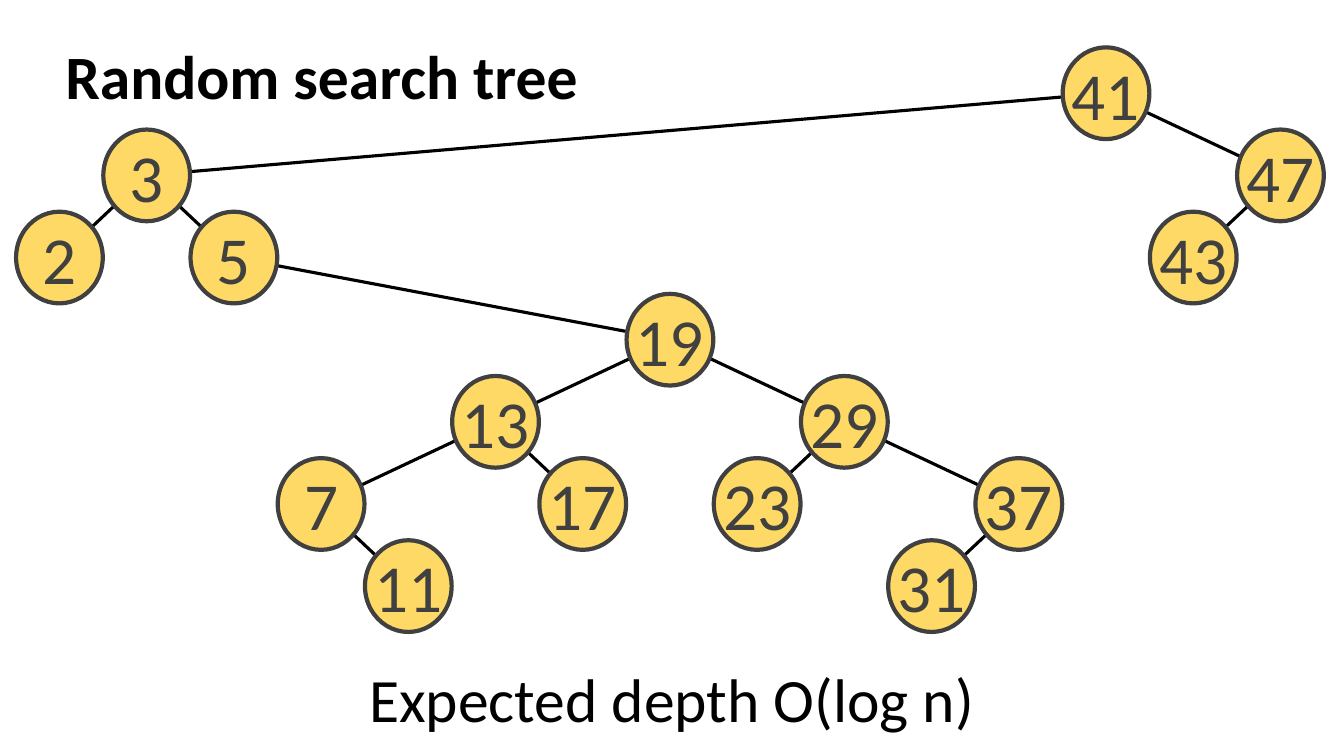
from lxml import etree
from pptx import Presentation
from pptx.dml.color import RGBColor
from pptx.enum.shapes import MSO_CONNECTOR, MSO_SHAPE
from pptx.enum.text import MSO_ANCHOR, PP_ALIGN
from pptx.oxml.ns import qn
from pptx.util import Inches, Pt

TITLE = "Random search tree"
NOTE = "Expected depth O(log n)"
ROOT = 41
KIDS = {
    41: (3, 47),
    3: (2, 5),
    47: (43, None),
    5: (None, 19),
    19: (13, 29),
    13: (7, 17),
    29: (23, 37),
    7: (None, 11),
    37: (31, None),
}

BLACK = RGBColor(0x00, 0x00, 0x00)
GRAY = RGBColor(0x40, 0x40, 0x40)
GOLD = RGBColor(0xFF, 0xD9, 0x66)
FONT = "Calibri"
LINE, OVAL = MSO_CONNECTOR.STRAIGHT, MSO_SHAPE.OVAL
MIDDLE, TOP = MSO_ANCHOR.MIDDLE, MSO_ANCHOR.TOP
LEFT, CENTER = PP_ALIGN.LEFT, PP_ALIGN.CENTER

WIDE, HIGH = 13.33, 7.5
COL, ROW = 0.865, 0.815
NODE_W, NODE_H = 0.86, 0.91
EDGE_X, EDGE_Y = 0.16, 0.47


def walk(key, depth=0):
    if key is None:
        return []
    left, right = KIDS.get(key, (None, None))
    return walk(left, depth + 1) + [(key, depth)] + walk(right, depth + 1)


def write(shape, text, size, color, align, anchor, bold=False):
    frame = shape.text_frame
    frame.text = text
    frame.vertical_anchor = anchor
    para = frame.paragraphs[0]
    para.alignment = align
    font = para.font
    font.name, font.size, font.bold = FONT, Pt(size), bold
    font.color.rgb = color
    return frame


def add_text(slide, box, text, align, anchor, bold=False):
    shape = slide.shapes.add_textbox(*map(Inches, box))
    frame = write(shape, text, 44, BLACK, align, anchor, bold)
    frame.word_wrap = True
    return frame


def add_edge(slide, start, end):
    edge = slide.shapes.add_connector(LINE, *map(Inches, start + end))
    edge.line.color.rgb = BLACK
    edge.line.width = Pt(2.25)
    etree.SubElement(edge._element.spPr, qn("a:effectLst"))


def add_node(slide, key, x, y):
    box = x - NODE_W / 2, y - NODE_H / 2, NODE_W, NODE_H
    node = slide.shapes.add_shape(OVAL, *map(Inches, box))
    node.shadow.inherit = False
    node.fill.solid()
    node.fill.fore_color.rgb = GOLD
    node.line.color.rgb = GRAY
    node.line.width = Pt(3)
    frame = write(node, str(key), 48, GRAY, CENTER, MIDDLE)
    frame.word_wrap = False
    frame.margin_left = frame.margin_right = 0
    frame.margin_top = frame.margin_bottom = 0


def main():
    deck = Presentation()
    deck.slide_width, deck.slide_height = Inches(WIDE), Inches(HIGH)
    slide = deck.slides.add_slide(deck.slide_layouts[6])

    title = add_text(slide, (0.55, 0.06, 11.5, 1.45), TITLE, LEFT, MIDDLE, True)
    title.paragraphs[0].line_spacing = 0.9

    spots = {
        key: (EDGE_X + NODE_W / 2 + COL * rank, EDGE_Y + NODE_H / 2 + ROW * depth)
        for rank, (key, depth) in enumerate(walk(ROOT))
    }
    for key, pair in KIDS.items():
        for kid in pair:
            if kid is not None:
                add_edge(slide, spots[key], spots[kid])
    for key, (x, y) in spots.items():
        add_node(slide, key, x, y)

    add_text(slide, (0, 6.51, WIDE, 0.84), NOTE, CENTER, TOP)
    deck.save("out.pptx")


if __name__ == "__main__":
    main()
